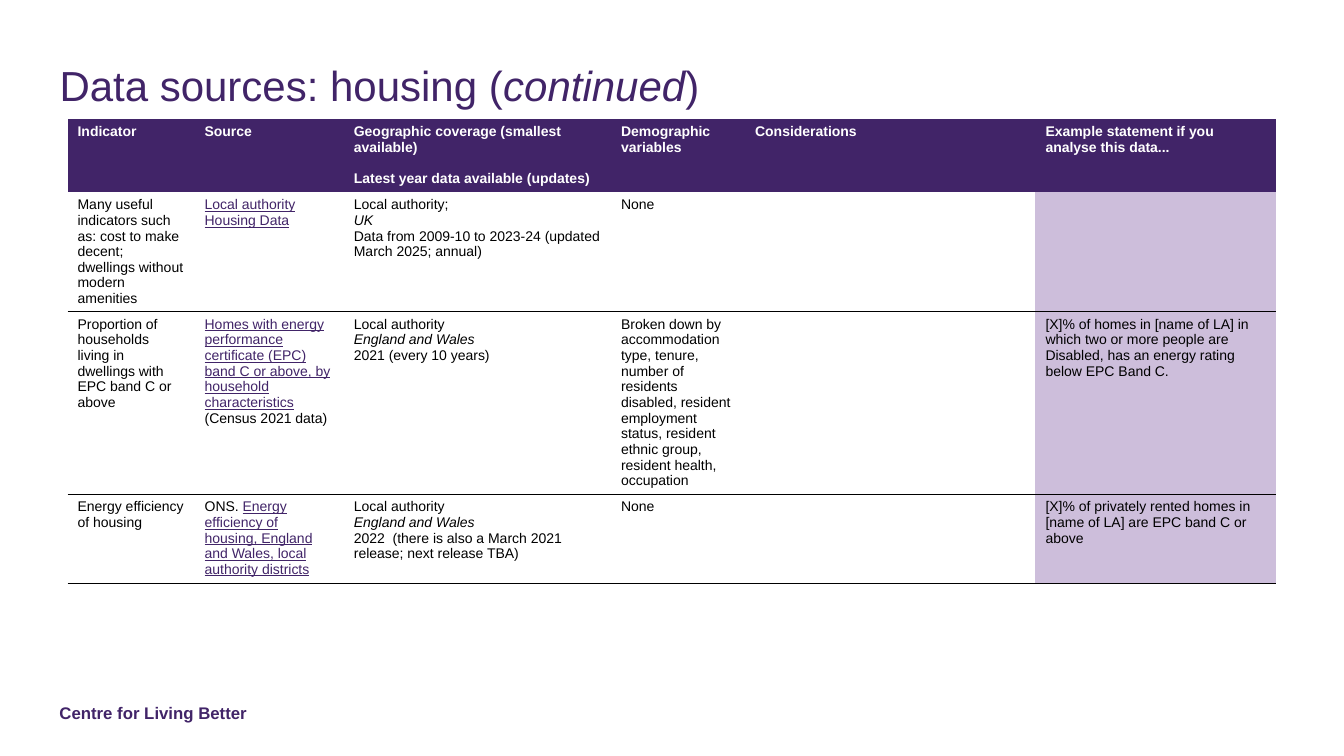
from lxml.etree import SubElement
from pptx import Presentation
from pptx.dml.color import RGBColor
from pptx.enum.text import MSO_ANCHOR as Anchor, MSO_AUTO_SIZE as AutoSize, PP_ALIGN as Align
from pptx.oxml.ns import qn
from pptx.util import Inches, Pt

PURPLE, LILAC, BLACK, WHITE = "412468", "CDBEDB", "000000", "FFFFFF"
PLAIN_TABLE = "{2D5ABB26-0587-4C30-8999-92F81FD0307C}"
COLUMNS = [1.26, 1.48, 2.65, 1.33, 2.88, 2.39]
ROWS = [0.72, 1.03, 1.81, 0.89]
RULES = [0, 0.75, 0.75, 0.5]

HEADINGS = [
    ["Indicator"],
    ["Source"],
    ["Geographic coverage (smallest available)", "Latest year data available (updates)"],
    ["Demographic variables"],
    ["Considerations"],
    ["Example statement if you analyse this data..."],
]
SOURCES = [
    [
        ["Many useful indicators such as: cost to make decent; dwellings without modern amenities"],
        [[("Local authority Housing Data", "link")]],
        ["Local authority;", [("UK", "italic")],
         "Data from 2009-10 to 2023-24 (updated March 2025; annual)"],
        ["None"],
        [],
        [],
    ],
    [
        ["Proportion of households living in dwellings with EPC band C or above"],
        [[("Homes with energy performance certificate (EPC) band C or above, "
           "by household characteristics", "link")], "(Census 2021 data)"],
        ["Local authority", [("England and Wales", "italic")], "2021 (every 10 years)"],
        ["Broken down by accommodation type, tenure, number of residents disabled, resident "
         "employment status, resident ethnic group, resident health, occupation"],
        [],
        ["[X]% of homes in [name of LA] in which two or more people are Disabled, "
         "has an energy rating below EPC Band C."],
    ],
    [
        ["Energy efficiency of housing"],
        [[("ONS. ", "plain"),
          ("Energy efficiency of housing, England and Wales, local authority districts", "link")]],
        ["Local authority", [("England and Wales", "italic")],
         "2022  (there is also a March 2021 release; next release TBA)"],
        ["None"],
        [],
        ["[X]% of privately rented homes in [name of LA] are EPC band C or above"],
    ],
]


def colour(value):
    """Turn a hex string into a colour."""
    return RGBColor.from_string(value)


def add_span(para, text, size, ink, bold=False, style="plain"):
    """Add one run in the given look."""
    span = para.add_run()
    span.text = text
    font = span.font
    font.name, font.size, font.bold = "Arial", Pt(size), bold
    font.italic = style == "italic"
    font.underline = style == "link"
    font.color.rgb = colour(PURPLE if style == "link" else ink)


def clear_margins(frame):
    """Set a text frame flush with its box, anchored at the top."""
    frame.margin_left = frame.margin_right = frame.margin_top = frame.margin_bottom = 0
    frame.word_wrap, frame.auto_size = True, AutoSize.NONE
    frame.vertical_anchor = Anchor.TOP


def add_title(page, left, top, width, height):
    """Fill the title placeholder."""
    title = page.shapes.title
    title.left, title.top, title.width, title.height = map(Inches, (left, top, width, height))
    clear_margins(title.text_frame)
    para = title.text_frame.paragraphs[0]
    para.alignment, para.line_spacing = Align.LEFT, Pt(36)
    for text, style in [("Data sources: housing (", "plain"), ("continued", "italic"), (")", "plain")]:
        add_span(para, text, 30, PURPLE, style=style)


def add_signature(page, left, top, width, height):
    """Place the organisation's name at the foot."""
    box = page.shapes.add_textbox(*map(Inches, (left, top, width, height)))
    clear_margins(box.text_frame)
    add_span(box.text_frame.paragraphs[0], "Centre for Living Better", 12, PURPLE, bold=True)


def rule_below(cell, points):
    """Draw a black line under a cell."""
    props = cell._tc.get_or_add_tcPr()
    line = SubElement(props, qn("a:lnB"), w=str(Pt(points)))
    fill = SubElement(line, qn("a:solidFill"))
    SubElement(fill, qn("a:srgbClr"), val=BLACK)
    props.insert(0, line)


def fill_cell(cell, paragraphs, ink, back, bold, gap):
    """Write a cell's paragraphs and set its background."""
    if back:
        cell.fill.solid()
        cell.fill.fore_color.rgb = colour(back)
    else:
        cell.fill.background()
    frame = cell.text_frame
    for index, content in enumerate(paragraphs):
        para = frame.add_paragraph() if index else frame.paragraphs[0]
        para.space_before = Pt(gap if index else 0)
        spans = [(content, "plain")] if isinstance(content, str) else content
        for text, style in spans:
            add_span(para, text, 10, ink, bold, style)


def add_source_table(page, left, top):
    """Build the table of data sources."""
    size = (left, top, sum(COLUMNS), sum(ROWS))
    table = page.shapes.add_table(len(ROWS), len(COLUMNS), *map(Inches, size)).table
    table.first_row = table.horz_banding = False
    table._tbl.tblPr.find(qn("a:tableStyleId")).text = PLAIN_TABLE
    for column, width in zip(table.columns, COLUMNS):
        column.width = Inches(width)
    for row, height in zip(table.rows, ROWS):
        row.height = Inches(height)
    for r, contents in enumerate([HEADINGS] + SOURCES):
        for c, paragraphs in enumerate(contents):
            cell = table.cell(r, c)
            if r == 0:
                fill_cell(cell, paragraphs, WHITE, PURPLE, True, 11.5)
            else:
                back = LILAC if c == len(COLUMNS) - 1 else None
                fill_cell(cell, paragraphs, BLACK, back, False, 0)
                rule_below(cell, RULES[r])


def main():
    """Build and save the deck."""
    deck = Presentation()
    deck.slide_width, deck.slide_height = Inches(13.33), Inches(7.5)
    page = deck.slides.add_slide(deck.slide_layouts[5])
    add_signature(page, 0.59, 6.97, 3.56, 0.2)
    add_title(page, 0.59, 0.59, 12.15, 1.13)
    add_source_table(page, 0.67, 1.18)
    deck.save("out.pptx")


if __name__ == "__main__":
    main()
